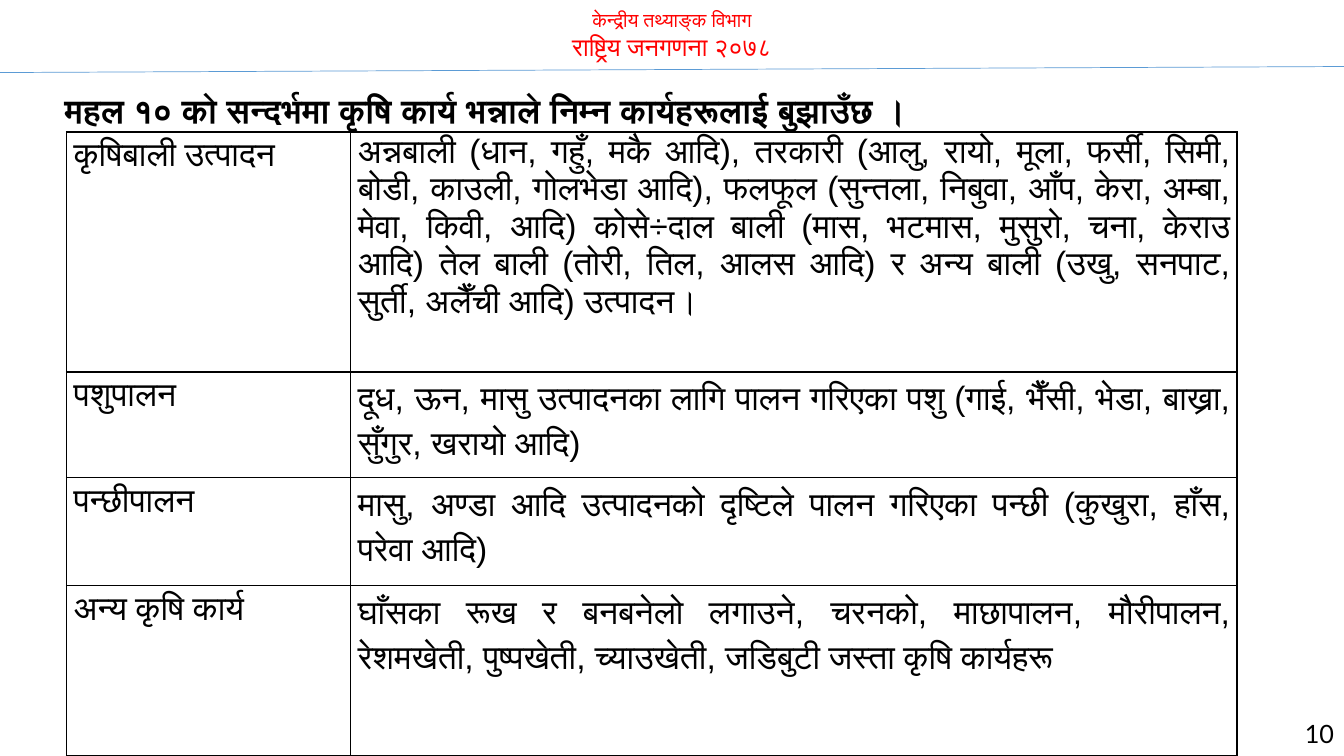
from lxml import etree
from pptx import Presentation
from pptx.dml.color import RGBColor
from pptx.enum.shapes import MSO_CONNECTOR
from pptx.enum.text import PP_ALIGN
from pptx.oxml.ns import qn
from pptx.util import Inches, Pt

LEFT, CENTER, RIGHT, JUSTIFY = PP_ALIGN.LEFT, PP_ALIGN.CENTER, PP_ALIGN.RIGHT, PP_ALIGN.JUSTIFY
STRAIGHT = MSO_CONNECTOR.STRAIGHT

THEME = {
    "black": "000000", "white": "FFFFFF", "red": "FF0000", "rule": "5B9BD5",
    "small": 14, "medium": 18, "large": 24,
    "heading_font": "Calibri", "table_font": "Arial", "number_font": "Lato",
}
W, H = 13.33, 7.5


def style(p, text, size, font, color, align, bold=False):
    p.text = text
    p.alignment = align
    p.font.size = Pt(THEME[size])
    p.font.name = THEME[font]
    p.font.bold = bold
    p.font.color.rgb = RGBColor.from_string(THEME[color])


def add_border(cell, side):
    ln = etree.SubElement(cell._tc.get_or_add_tcPr(), qn(f"a:{side}"), w=str(Pt(1)))
    fill = etree.SubElement(ln, qn("a:solidFill"))
    etree.SubElement(fill, qn("a:srgbClr"), val=THEME["black"])


prs = Presentation()
prs.slide_width, prs.slide_height = Inches(W), Inches(H)
s = prs.slides.add_slide(prs.slide_layouts[6])

rule = s.shapes.add_connector(STRAIGHT, 0, Inches(0.72), Inches(W), Inches(0.66))
rule.line.color.rgb = RGBColor.from_string(THEME["rule"])
rule.line.width = Pt(0.5)
etree.SubElement(rule._element.spPr, qn("a:effectLst"))

text_boxes = [
    ((0, 0.03, W, 0.64), CENTER, False, [
        ("केन्द्रीय तथ्याङ्क विभाग", "small", "heading_font", "red"),
        ("राष्ट्रिय जनगणना २०७८", "medium", "heading_font", "red"),
    ]),
    ((W - 3, 7.08, 3, 0.4), RIGHT, False, [("10", "medium", "number_font", "black")]),
    ((0.54, 0.84, 12.25, 0.5), LEFT, True, [
        ("महल १० को सन्दर्भमा कृषि कार्य भन्नाले निम्न कार्यहरूलाई बुझाउँछ ।",
         "large", "heading_font", "black"),
    ]),
]
for box, align, bold, lines in text_boxes:
    tf = s.shapes.add_textbox(*map(Inches, box)).text_frame
    tf.word_wrap = True
    for i, (text, size, font, color) in enumerate(lines):
        p = tf.add_paragraph() if i else tf.paragraphs[0]
        style(p, text, size, font, color, align, bold)

farm_work = [
    (2.38, "कृषिबाली उत्पादन",
     "अन्नबाली (धान, गहुँ, मकै आदि), तरकारी (आलु, रायो, मूला, फर्सी, सिमी, बोडी, काउली, "
     "गोलभेडा आदि), फलफूल (सुन्तला, निबुवा, आँप, केरा, अम्बा, मेवा, किवी, आदि) कोसे÷दाल बाली "
     "(मास, भटमास, मुसुरो, चना, केराउ आदि) तेल बाली (तोरी, तिल, आलस आदि) र अन्य बाली "
     "(उखु, सनपाट, सुर्ती, अलैँची आदि) उत्पादन।"),
    (1.05, "पशुपालन",
     "दूध, ऊन, मासु उत्पादनका लागि पालन गरिएका पशु (गाई, भैँसी, भेडा, बाख्रा, सुँगुर, खरायो आदि)"),
    (1.07, "पन्छीपालन",
     "मासु, अण्डा आदि उत्पादनको दृष्टिले पालन गरिएका पन्छी (कुखुरा, हाँस, परेवा आदि)"),
    (1.69, "अन्य कृषि कार्य",
     "घाँसका रूख र बनबनेलो लगाउने, चरनको, माछापालन, मौरीपालन, रेशमखेती, पुष्पखेती, "
     "च्याउखेती, जडिबुटी जस्ता कृषि कार्यहरू"),
]
columns = (2.82, 8.79)
table = s.shapes.add_table(len(farm_work), len(columns), Inches(0.66), Inches(1.31),
                           Inches(sum(columns)), Inches(sum(r[0] for r in farm_work))).table
table.first_row = table.horz_banding = False
for column, width in zip(table.columns, columns):
    column.width = Inches(width)

for row, (height, *texts) in enumerate(farm_work):
    table.rows[row].height = Inches(height)
    for col, text in enumerate(texts):
        cell = table.cell(row, col)
        cell.margin_left = cell.margin_right = Inches(0.07)
        cell.margin_top, cell.margin_bottom = Inches(0.01), 0
        p = cell.text_frame.paragraphs[0]
        style(p, text, "large", "table_font", "black", JUSTIFY)
        p.space_after = Pt(4)
        p.line_spacing = 1.0 if (row, col) == (0, 1) else 1.2
        for side in ("lnL", "lnR", "lnT", "lnB"):
            add_border(cell, side)
        cell.fill.solid()
        cell.fill.fore_color.rgb = RGBColor.from_string(THEME["white"])

prs.save("out.pptx")
